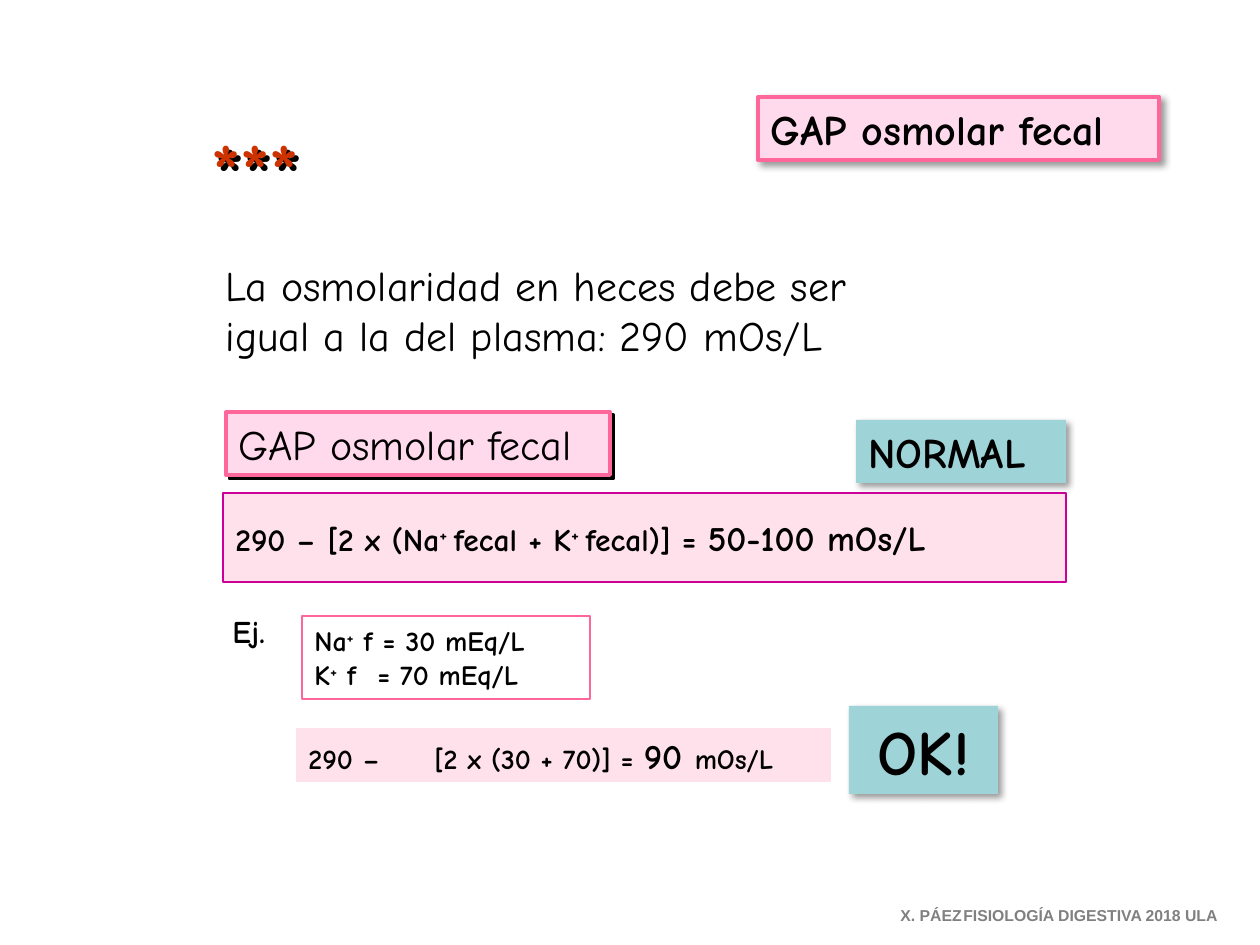
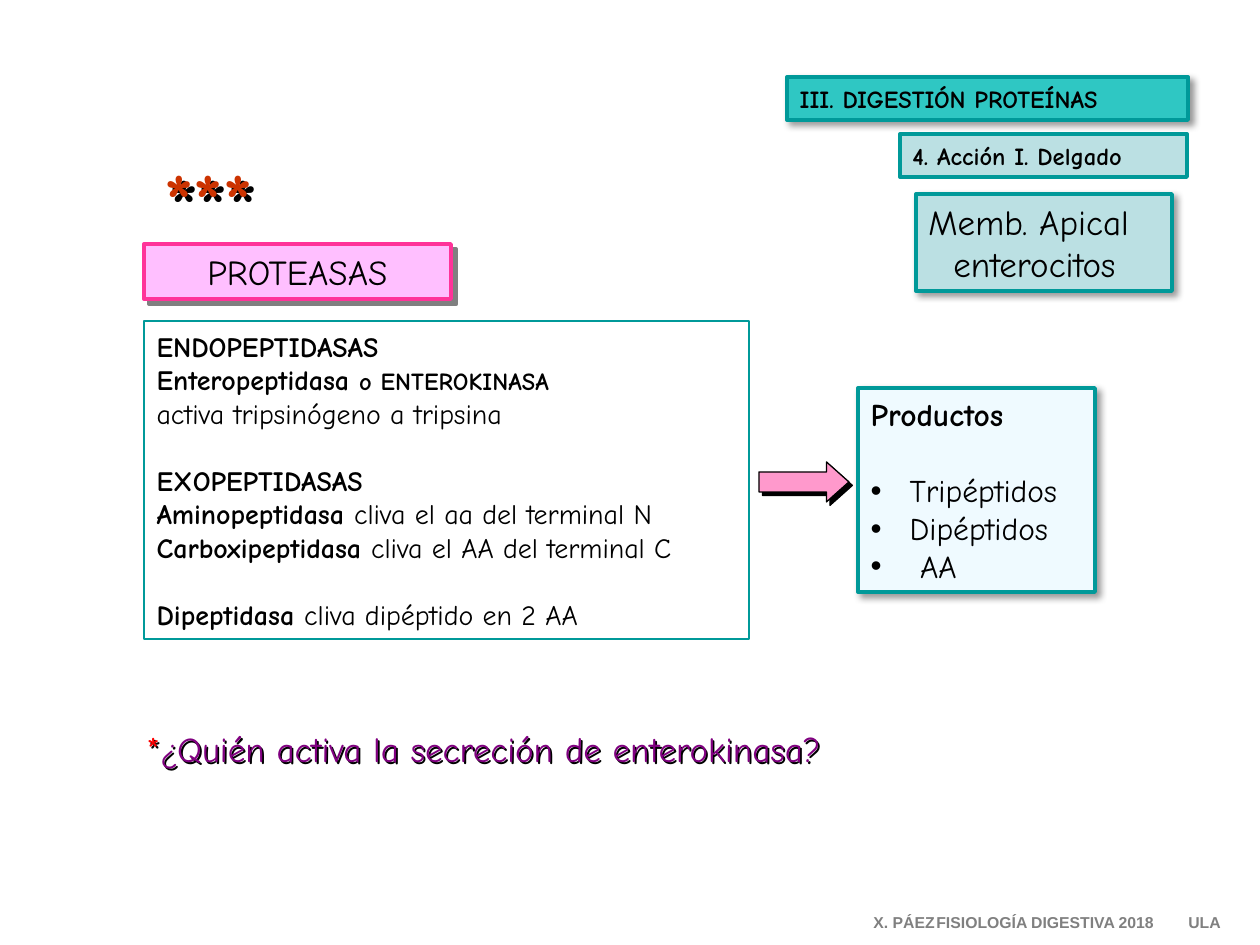
from lxml.etree import SubElement as Sub
from pptx import Presentation
from pptx.dml.color import RGBColor as Rgb
from pptx.enum.shapes import MSO_SHAPE as Kind
from pptx.enum.text import MSO_ANCHOR as Anchor, MSO_AUTO_SIZE as Auto, PP_ALIGN as Align
from pptx.oxml.ns import qn
from pptx.util import Pt

PX = 914400 / 126
FONT = "Comic Neue"
HUE = {
    "ink": "000000", "gray": "808080", "rust": "CC3300", "red": "FF0000",
    "plum": "800080", "rose": "FFD9EC", "pink": "FF6699", "blush": "FFE1EB",
    "wine": "CC0099", "aqua": "9ED3D7", "teal": "009999", "sea": "2FC7C3",
    "mist": "BBE0E3", "ice": "EFFAFF", "lilac": "FFBFFF", "hot": "FF3399",
    "candy": "FF99CC",
}
# Shadows: colour, opacity %, blur pt, distance pt
SOFT = ("ink", 40, 4, 3)
HARD = ("ink", 100, 0, 2.8)
DULL = ("gray", 100, 0, 4.2)
FAR = ("ink", 100, 0, 4.2)
NEAR = ("ink", 100, 0, 1.4)


def dress(shape, spot, fill=None, line=None, wide=0, shade=None):
    """Place a shape and set its fill, line and shadow."""
    shape.left, shape.top, shape.width, shape.height = [round(n * PX) for n in spot]
    if fill:
        shape.fill.solid()
        shape.fill.fore_color.rgb = Rgb.from_string(HUE[fill])
    else:
        shape.fill.background()
    if line:
        shape.line.color.rgb = Rgb.from_string(HUE[line])
        shape.line.width = Pt(wide)
    else:
        shape.line.fill.background()
    shape.shadow.inherit = False
    if shade:
        hue, alpha, blur, dist = shade
        fx = shape._element.spPr.find(qn("a:effectLst"))
        cast = Sub(fx, qn("a:outerShdw"), blurRad=str(Pt(blur)), dist=str(Pt(dist)),
                   dir="2700000", algn="tl", rotWithShape="0")
        tint = Sub(cast, qn("a:srgbClr"), val=HUE[hue])
        Sub(tint, qn("a:alpha"), val=str(alpha * 1000))


def write(shape, paras, align=Align.LEFT, gaps={}, marks={}, tabs=(), font=FONT):
    """Fill with runs (text, size, style b/s, colour); gaps and marks go by paragraph."""
    frame = shape.text_frame
    frame.word_wrap = True
    frame.auto_size = Auto.NONE
    frame.vertical_anchor = Anchor.MIDDLE
    for i, runs in enumerate(paras):
        para = frame.add_paragraph() if i else frame.paragraphs[0]
        para.alignment = align
        para.space_before = Pt(gaps.get(i, 0))
        left, hang, sign = marks.get(i, (0, 0, None))
        props = para._p.get_or_add_pPr()
        props.set("marL", str(round(left * PX)))
        props.set("indent", str(round(-hang * PX)))
        if sign:
            Sub(props, qn("a:buFont"), typeface="Arial")
            Sub(props, qn("a:buChar"), char=sign)
        else:
            Sub(props, qn("a:buNone"))
        if tabs:
            stops = Sub(props, qn("a:tabLst"))
            for pos in tabs:
                Sub(stops, qn("a:tab"), pos=str(round(pos * PX)), algn="l")
        for text, size, style, *hue in runs:
            run = para.add_run()
            run.text = text
            run.font.name = font
            run.font.size = Pt(size)
            run.font.bold = "b" in style
            run.font.color.rgb = Rgb.from_string(HUE[hue[0] if hue else "ink"])
            if "s" in style:
                run._r.get_or_add_rPr().set("baseline", "30000")


deck = Presentation()
deck.slide_width, deck.slide_height = round(1260 * PX), round(945 * PX)
gap = deck.slides.add_slide(deck.slide_layouts[1])
prot = deck.slides.add_slide(deck.slide_layouts[3])

# Titles
for slide, spot, look, text, size in [
    (gap, (758, 97, 401, 63), ("rose", "pink"), "GAP osmolar fecal", 24),
    (prot, (787, 77, 401, 43), ("sea", "teal"), "III. DIGESTIÓN PROTEÍNAS", 14),
]:
    dress(slide.shapes.title, spot, *look, 2.25, SOFT)
    write(slide.shapes.title, [[(text, size, "b")]])

# Stars and footers
for slide, star, shade, foot, tail in [
    (gap, (166, 115, 179, 106), HARD, (888, 900, 368, 31), " ULA"),
    (prot, (134, 145, 149, 106), FAR, (861, 907, 375, 31), "\tULA"),
]:
    box = slide.shapes.add_textbox(0, 0, 0, 0)
    dress(box, star, shade=shade)
    write(box, [[("***", 44, "b", "rust")]], Align.CENTER)
    box = slide.shapes.add_textbox(0, 0, 0, 0)
    dress(box, foot)
    write(box, [[("X. PÁEZ\tFISIOLOGÍA DIGESTIVA 2018" + tail, 9, "b", "gray")]],
          tabs=(75, 301), font="Arial")

# Body lists
body = gap.placeholders[1]
dress(body, (213, 252, 701, 115))
write(body, [[("La osmolaridad en heces debe ser", 24, "")],
             [("igual a la del plasma: 290 mOs/L", 24, "")]])

body = prot.placeholders[1]
dress(body, (144, 321, 605, 318), line="teal", wide=0.75)
write(body, [
    [("ENDOPEPTIDASAS", 16, "b")],
    [("Enteropeptidasa ", 16, "b"), ("o ENTEROKINASA", 14, "b")],
    [("activa tripsinógeno a tripsina", 16, "")],
    [("EXOPEPTIDASAS", 16, "b")],
    [("Aminopeptidasa ", 16, "b"), ("cliva el aa del terminal N", 16, "")],
    [("Carboxipeptidasa ", 16, "b"), ("cliva el AA del terminal C", 16, "")],
    [("Dipeptidasa ", 16, "b"), ("cliva dipéptido en 2 AA", 16, "")],
], gaps={3: 19, 6: 19})

body = prot.placeholders[2]
dress(body, (858, 388, 237, 204), "ice", "teal", 2.25, SOFT)
items = ["Tripéptidos", "Dipéptidos", " AA"]
write(body, [[("Productos", 18, "b")]] + [[(item, 18, "")] for item in items],
      gaps={1: 22}, marks={i: (39, 39, "•") for i in (1, 2, 3)})

# Boxes: slide, place, look, paragraphs, text options
mid = {"align": Align.CENTER}
for slide, spot, look, paras, opts in [
    (gap, (226, 412, 384, 63), ("rose", "pink", 2.25, HARD),
     [[("GAP osmolar fecal", 24, "")]], {}),
    (gap, (223, 493, 843, 89), ("blush", "wine", 0.75),
     [[("290 – [2 x (Na", 18, "b"), ("+ ", 18, "bs"), ("fecal + K", 18, "b"),
       ("+ ", 18, "bs"), ("fecal)] = ", 18, "b"), ("50-100 mOs/L", 20, "b")]], {}),
    (gap, (302, 616, 288, 83), (None, "pink", 1.5),
     [[("Na", 16, "b"), ("+", 16, "bs"), (" f = 30 mEq/L", 16, "b")],
      [("K", 16, "b"), ("+", 16, "bs"), (" f\t= 70 mEq/L", 16, "b")]], {"tabs": (71,)}),
    (gap, (296, 728, 535, 54), ("blush",),
     [[("290 –\t[2 x (30 + 70)] = ", 16, "b"), ("90 ", 20, "b"),
       ("mOs/L", 16, "b")]], {"tabs": (92,)}),
    (gap, (849, 706, 149, 88), ("aqua", None, 0, SOFT), [[("OK!", 36, "b")]], mid),
    (gap, (856, 420, 210, 63), ("aqua", None, 0, SOFT), [[("NORMAL", 24, "b")]], {}),
    (prot, (144, 244, 307, 55), ("lilac", "hot", 2.25, DULL),
     [[("PROTEASAS", 20, "")]], mid),
    (prot, (900, 134, 287, 43), ("mist", "teal", 2.25),
     [[("4. Acción I. Delgado", 14, "b")]], {}),
    (prot, (916, 194, 256, 97), ("mist", "teal", 2.25, SOFT),
     [[("Memb. Apical", 20, "")], [("enterocitos", 20, "")]], {"marks": {1: (25, 0, None)}}),
]:
    box = slide.shapes.add_shape(Kind.RECTANGLE, 0, 0, 0, 0)
    dress(box, spot, *look)
    write(box, paras, **opts)

# Example label and closing question
label = gap.shapes.add_textbox(0, 0, 0, 0)
dress(label, (220, 606, 72, 50))
write(label, [[("Ej.", 18, "b")]])

ask = prot.shapes.add_textbox(0, 0, 0, 0)
dress(ask, (134, 721, 765, 55), shade=NEAR)
write(ask, [[("*", 20, "", "red"),
             ("¿Quién activa la secreción de enterokinasa?", 20, "", "plum")]])

# Arrow to the products
arrow = prot.shapes.add_shape(Kind.RIGHT_ARROW, 0, 0, 0, 0)
dress(arrow, (759, 462, 90, 40), "candy", "ink", 0.75, HARD)
arrow.adjustments[0], arrow.adjustments[1] = 0.5, 0.56

deck.save("out.pptx")
